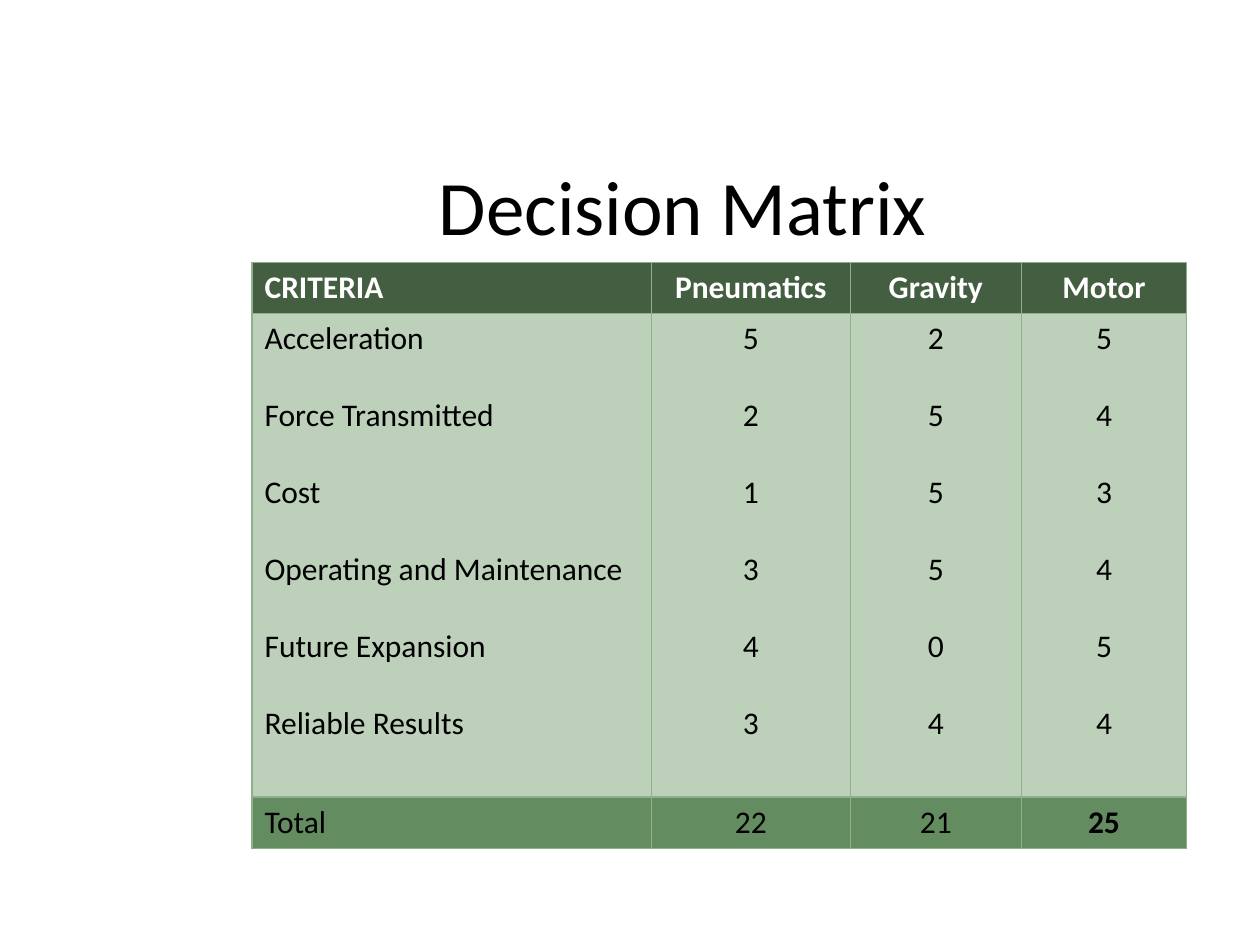
from lxml import etree
from pptx import Presentation
from pptx.dml.color import RGBColor
from pptx.enum.text import MSO_ANCHOR, PP_ALIGN
from pptx.oxml.ns import qn
from pptx.util import Cm, Pt

LEFT, CENTER = PP_ALIGN.LEFT, PP_ALIGN.CENTER
MIDDLE = MSO_ANCHOR.MIDDLE
TITLE_ONLY = 5

COLORS = {
    "text": "000000",
    "header_text": "FFFFFF",
    "header": "435E40",
    "body": "BCD0BA",
    "total": "648C61",
    "border": "8FB08C",
}

OPTIONS = ["Pneumatics", "Gravity", "Motor"]
SCORES = {
    "Acceleration": [5, 2, 5],
    "Force Transmitted": [2, 5, 4],
    "Cost": [1, 5, 3],
    "Operating and Maintenance": [3, 5, 4],
    "Future Expansion": [4, 0, 5],
    "Reliable Results": [3, 4, 4],
}
TOTALS = [22, 21, 25]
COL_WIDTHS = [8.05, 4.01, 3.45, 3.33]
ROW_HEIGHTS = [1.02, 9.75, 1.02]


class SlideBuilder:
    font_name = "Calibri"
    title_size = Pt(44)
    cell_size = Pt(18)
    line_gap = Pt(22)

    def __init__(self, slide):
        self.slide = slide

    def style(self, p, size, color, align, bold=False):
        p.alignment = align
        p.font.name = self.font_name
        p.font.size = size
        p.font.bold = bold
        p.font.color.rgb = RGBColor.from_string(COLORS[color])

    def title(self, text, left, top, width, height):
        sp = self.slide.shapes.title
        sp.left, sp.top = Cm(left), Cm(top)
        sp.width, sp.height = Cm(width), Cm(height)
        tf = sp.text_frame
        tf.text = text
        tf.vertical_anchor = MIDDLE
        self.style(tf.paragraphs[0], self.title_size, "text", CENTER)

    def borders(self, cell):
        tcPr = cell._tc.get_or_add_tcPr()
        for side in ("lnL", "lnR", "lnT", "lnB"):
            ln = etree.SubElement(tcPr, qn(f"a:{side}"), w=str(Pt(1)))
            fill = etree.SubElement(ln, qn("a:solidFill"))
            etree.SubElement(fill, qn("a:srgbClr"), val=COLORS["border"])

    def cell(self, cell, lines, fill, color, align, bold):
        self.borders(cell)
        cell.fill.solid()
        cell.fill.fore_color.rgb = RGBColor.from_string(COLORS[fill])
        tf = cell.text_frame
        tf.text = "\n".join(str(line) for line in lines)
        for i, p in enumerate(tf.paragraphs):
            self.style(p, self.cell_size, color, align, bold)
            if i:
                p.space_before = self.line_gap

    def table(self, rows, left, top):
        """Draw rows of (fill, text colour, cells), each cell a list of lines."""
        frame = self.slide.shapes.add_table(
            len(rows), len(COL_WIDTHS), Cm(left), Cm(top),
            Cm(sum(COL_WIDTHS)), Cm(sum(ROW_HEIGHTS)))
        table = frame.table
        table.horz_banding = False
        for column, width in zip(table.columns, COL_WIDTHS):
            column.width = Cm(width)
        for row, height, (fill, color, cells) in zip(table.rows, ROW_HEIGHTS, rows):
            row.height = Cm(height)
            for c, lines in enumerate(cells):
                winner = fill == "total" and lines == [max(TOTALS)]
                self.cell(row.cells[c], lines, fill, color,
                          CENTER if c else LEFT, fill == "header" or winner)


def main():
    prs = Presentation()
    prs.slide_width, prs.slide_height = Cm(25.4), Cm(19.05)
    s = SlideBuilder(prs.slides.add_slide(prs.slide_layouts[TITLE_ONLY]))
    s.title("Decision Matrix", 2.34, 2.54, 22.86, 3.18)
    s.table([
        ("header", "header_text", [[name] for name in ["CRITERIA", *OPTIONS]]),
        ("body", "text", [list(SCORES), *map(list, zip(*SCORES.values()))]),
        ("total", "text", [[value] for value in ["Total", *TOTALS]]),
    ], 5.08, 5.29)
    prs.save("out.pptx")


if __name__ == "__main__":
    main()
